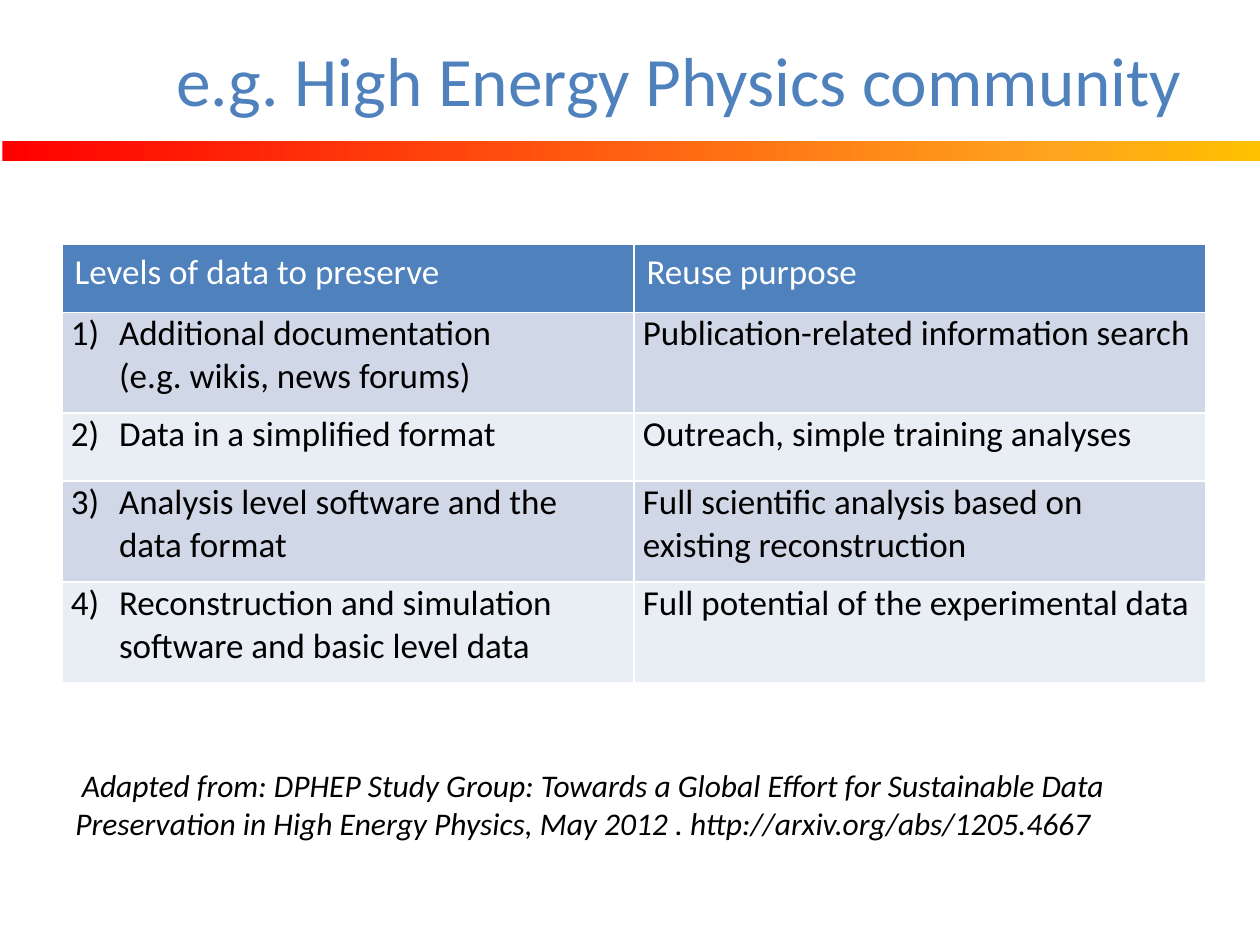
from copy import deepcopy
from typing import NamedTuple

from lxml import etree
from pptx import Presentation
from pptx.dml.color import RGBColor
from pptx.enum.shapes import MSO_SHAPE
from pptx.enum.text import MSO_ANCHOR, PP_ALIGN
from pptx.oxml.ns import qn
from pptx.util import Cm, Pt

RECTANGLE = MSO_SHAPE.RECTANGLE
MIDDLE, BOTTOM = MSO_ANCHOR.MIDDLE, MSO_ANCHOR.BOTTOM
LEFT, RIGHT = PP_ALIGN.LEFT, PP_ALIGN.RIGHT

FONT = "Calibri"
BLUE = RGBColor(0x4F, 0x81, 0xBD)
WHITE = RGBColor(0xFF, 0xFF, 0xFF)
BLACK = RGBColor(0x00, 0x00, 0x00)
BAND_DARK = RGBColor(0xD0, 0xD8, 0xE8)
BAND_LIGHT = RGBColor(0xE9, 0xED, 0xF4)
RED = RGBColor(0xFF, 0x00, 0x00)
ORANGE = RGBColor(0xFF, 0xA4, 0x1D)
GOLD = RGBColor(0xFF, 0xC0, 0x00)
RULE_STOPS = ((0, RED), (0.84, ORANGE), (1, GOLD))

COLUMN_WIDTH = Cm(11.53)
NUMBER_INDENT = Cm(0.97)


class Level(NamedTuple):
    data: str
    purpose: str
    height: Cm


class TextBlock(NamedTuple):
    text: str
    left: Cm
    top: Cm
    width: Cm
    height: Cm
    size: float
    color: RGBColor
    align: PP_ALIGN
    anchor: MSO_ANCHOR
    italic: bool = False
    first_indent: Cm = Cm(0)


HEADINGS = ("Levels of data to preserve", "Reuse purpose")
SINGLE, DOUBLE = Cm(1.37), Cm(2.03)
LEVELS = (
    Level("Additional documentation\v(e.g. wikis, news forums)",
          "Publication-related information search", DOUBLE),
    Level("Data in a simplified format",
          "Outreach, simple training analyses", SINGLE),
    Level("Analysis level software and the data format",
          "Full scientific analysis based on existing reconstruction", DOUBLE),
    Level("Reconstruction and simulation software and basic level data",
          "Full potential of the experimental data", DOUBLE),
)
TITLE = TextBlock("e.g. High Energy Physics community", Cm(3.1), Cm(0.53),
                  Cm(20.98), Cm(2.11), 39.6, BLUE, RIGHT, MIDDLE)
CITATION = TextBlock(
    "Adapted from: DPHEP Study Group: Towards a Global Effort for Sustainable "
    "Data Preservation in High Energy Physics, May 2012 . "
    "http://arxiv.org/abs/1205.4667",
    Cm(1.27), Cm(14.53), Cm(23.29), Cm(2.57), 18, BLACK, LEFT, BOTTOM,
    italic=True, first_indent=Cm(0.13))


def style_font(paragraph, size: float, color: RGBColor, italic: bool = False) -> None:
    font = paragraph.font
    font.name, font.size = FONT, Pt(size)
    font.bold, font.italic = False, italic
    font.color.rgb = color


def add_text(slide, block: TextBlock) -> None:
    box = slide.shapes.add_textbox(block.left, block.top, block.width, block.height)
    frame = box.text_frame
    frame.word_wrap = True
    frame.vertical_anchor = block.anchor
    paragraph = frame.paragraphs[0]
    paragraph.text = block.text
    paragraph.alignment = block.align
    if block.first_indent:
        paragraph._p.get_or_add_pPr().set("indent", str(block.first_indent))
    style_font(paragraph, block.size, block.color, block.italic)


def add_rule(slide) -> None:
    rule = slide.shapes.add_shape(RECTANGLE, Cm(0.05), Cm(2.84), Cm(25.35), Cm(0.41))
    rule.shadow.inherit = False
    rule.line.fill.background()
    rule.fill.gradient()
    rule.fill.gradient_angle = 0
    stop_list = next(rule._element.iter(qn("a:gsLst")))
    stop_list.append(deepcopy(stop_list[-1]))
    for stop, (position, color) in zip(rule.fill.gradient_stops, RULE_STOPS):
        stop.position = position
        stop.color.rgb = color


def add_borders(cell) -> None:
    properties = cell._tc.get_or_add_tcPr()
    for side in ("a:lnL", "a:lnR", "a:lnT", "a:lnB"):
        line = etree.SubElement(properties, qn(side), w=str(Pt(1)))
        fill = etree.SubElement(line, qn("a:solidFill"))
        etree.SubElement(fill, qn("a:srgbClr"), val=str(WHITE))


def fill_cell(cell, text: str, fill: RGBColor, color: RGBColor, number: int = 0) -> None:
    add_borders(cell)
    cell.fill.solid()
    cell.fill.fore_color.rgb = fill
    paragraph = cell.text_frame.paragraphs[0]
    paragraph.text = text
    if number:
        properties = paragraph._p.get_or_add_pPr()
        properties.set("marL", str(NUMBER_INDENT))
        properties.set("indent", str(-NUMBER_INDENT))
        etree.SubElement(properties, qn("a:buFont"), typeface="+mj-lt")
        etree.SubElement(properties, qn("a:buAutoNum"), type="arabicParenR",
                         startAt=str(number))
    style_font(paragraph, 20, color)


def add_levels_table(slide) -> None:
    heights = [SINGLE] + [level.height for level in LEVELS]
    table = slide.shapes.add_table(len(heights), len(HEADINGS), Cm(1.25), Cm(4.93),
                                   COLUMN_WIDTH * len(HEADINGS), sum(heights)).table
    table.horz_banding = False
    for column in table.columns:
        column.width = COLUMN_WIDTH
    for row, height in zip(table.rows, heights):
        row.height = height

    for index, heading in enumerate(HEADINGS):
        fill_cell(table.cell(0, index), heading, BLUE, WHITE)
    for number, level in enumerate(LEVELS, start=1):
        band = BAND_DARK if number % 2 else BAND_LIGHT
        data_cell, purpose_cell = table.cell(number, 0), table.cell(number, 1)
        for cell in (data_cell, purpose_cell):
            cell.margin_left = cell.margin_right = Cm(0.18)
            cell.margin_top = cell.margin_bottom = 0
        fill_cell(data_cell, level.data, band, BLACK, number)
        fill_cell(purpose_cell, level.purpose, band, BLACK)


def main() -> None:
    presentation = Presentation()
    presentation.slide_width, presentation.slide_height = Cm(25.4), Cm(19.05)
    slide = presentation.slides.add_slide(presentation.slide_layouts[6])

    # Heading with the coloured rule below it
    add_rule(slide)
    add_text(slide, TITLE)

    # Preservation levels and where they come from
    add_levels_table(slide)
    add_text(slide, CITATION)

    presentation.save("out.pptx")


if __name__ == "__main__":
    main()
